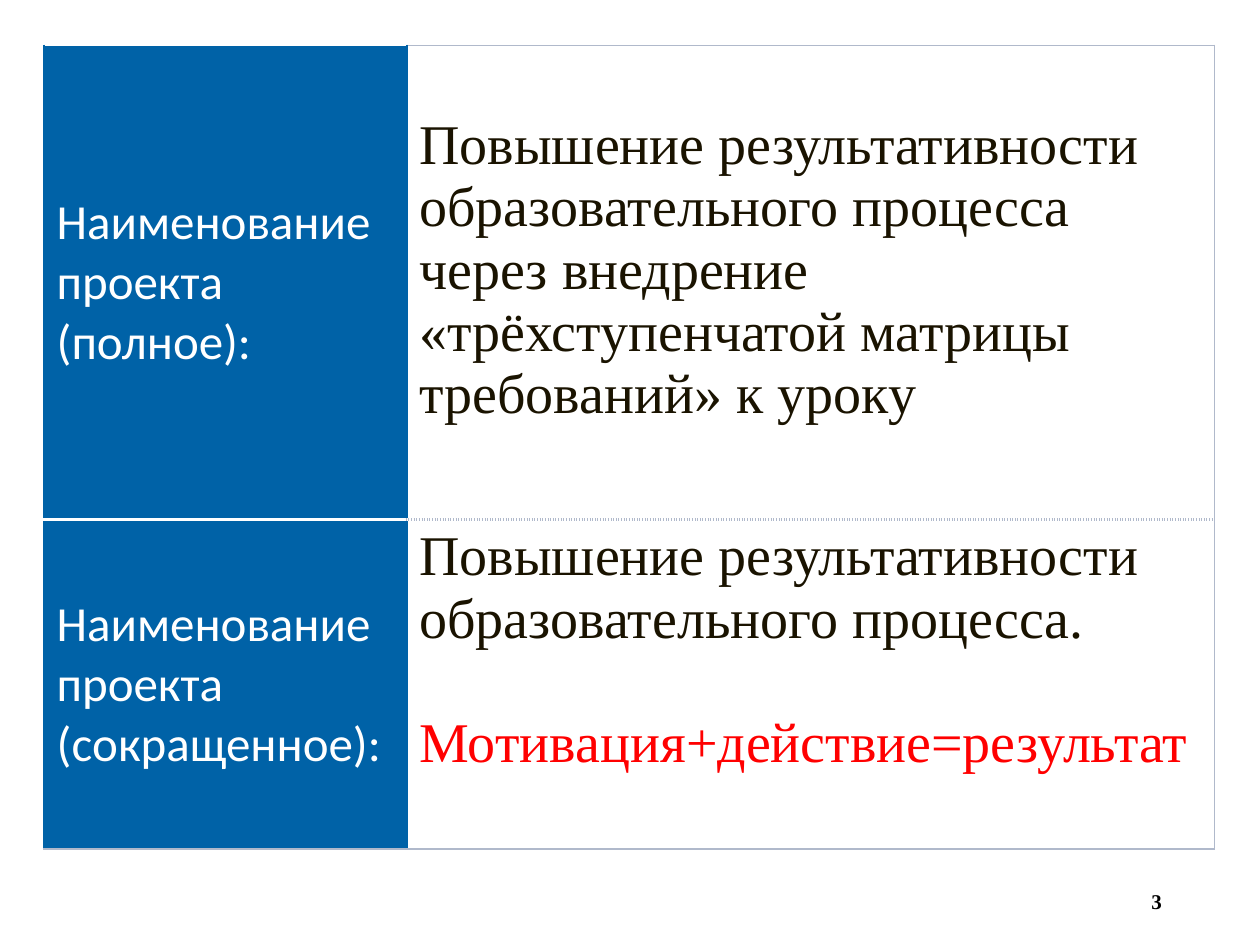
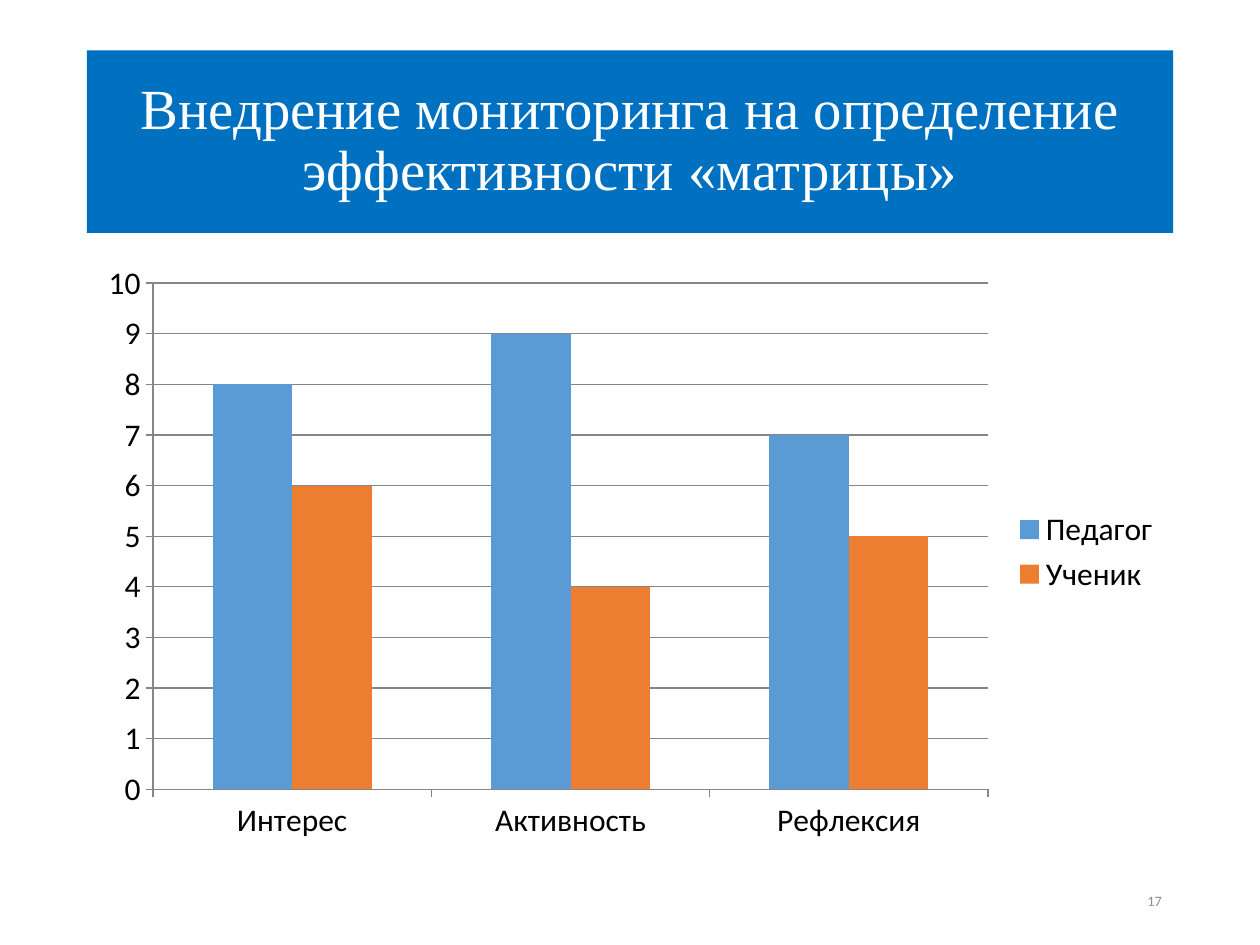
from dataclasses import dataclass
from typing import NamedTuple, Optional

from lxml.etree import SubElement
from pptx import Presentation
from pptx.chart.data import CategoryChartData
from pptx.dml.color import RGBColor
from pptx.enum.chart import XL_CHART_TYPE as ChartType, XL_LEGEND_POSITION as LegendPos, XL_TICK_MARK as Tick
from pptx.enum.shapes import MSO_SHAPE as Shape
from pptx.enum.text import MSO_ANCHOR as Anchor, PP_ALIGN as Align
from pptx.oxml.ns import qn
from pptx.util import Inches, Pt

SLIDE_W, SLIDE_H = Inches(10), Inches(7.5)


class TextStyle(NamedTuple):
    font: str
    size: float
    color: str
    bold: bool = False


@dataclass(frozen=True)
class Theme:
    white: str = "FFFFFF"
    label_fill: str = "0062A7"
    band_fill: str = "0070C0"
    rule: str = "B0B9CB"
    axis: str = "868686"
    series: tuple[str, ...] = ("5B9BD5", "ED7D31")
    title: TextStyle = TextStyle("Times New Roman", 32.4, "FFFFFF")
    label: TextStyle = TextStyle("Calibri", 28, "FFFFFF")
    body: TextStyle = TextStyle("Times New Roman", 32, "1A1300")
    accent: TextStyle = TextStyle("Times New Roman", 32, "FF0000")
    chart: TextStyle = TextStyle("Calibri", 18, "000000")
    number_strong: TextStyle = TextStyle("Times New Roman", 12, "000000", True)
    number_soft: TextStyle = TextStyle("Calibri", 8.2, "8C8C8C")


THEME = Theme()


class Frame(NamedTuple):
    left: float
    top: float
    width: float
    height: float

    def place(self) -> tuple[int, int, int, int]:
        return (int(SLIDE_W * self.left / 100), int(SLIDE_H * self.top / 100),
                int(SLIDE_W * self.width / 100), int(SLIDE_H * self.height / 100))


TITLE_BAND = Frame(6.9, 5.33, 86.2, 19.33)
CHART_AREA = Frame(6.9, 26.67, 86.2, 63.47)
NUMBER_BOX = Frame(70.7, 92.67, 22.5, 5.33)
TABLE_AREA = Frame(3.5, 4.8, 92.9, 85.07)
COLUMN_SHARES = (0.31, 0.69)
ROW_SHARES = (0.59, 0.41)


class Edge(NamedTuple):
    color: str
    width: float
    dash: str = "solid"


class Borders(NamedTuple):
    L: Edge
    R: Edge
    T: Optional[Edge]
    B: Edge


class Line(NamedTuple):
    text: str
    style: TextStyle
    before: float = 0


@dataclass(frozen=True)
class CellSpec:
    lines: tuple[Line, ...]
    fill: str
    borders: Borders
    anchor: Anchor = Anchor.TOP
    top_inset: float = 0.05


BLUE_EDGE = Edge(THEME.label_fill, 1.5)
WHITE_EDGE = Edge(THEME.white, 1.5)
THIN_EDGE = Edge(THEME.rule, 1)
DOT_EDGE = Edge(THEME.rule, 1.5, "sysDot")


def label_cell(text: str, top: Optional[Edge], bottom: Edge) -> CellSpec:
    return CellSpec((Line(text, THEME.label),), THEME.label_fill,
                    Borders(BLUE_EDGE, BLUE_EDGE, top, bottom), Anchor.MIDDLE)


def body_cell(lines: tuple[Line, ...], top: Edge, bottom: Edge, top_inset: float = 0.05) -> CellSpec:
    return CellSpec(lines, THEME.white, Borders(BLUE_EDGE, THIN_EDGE, top, bottom),
                    top_inset=top_inset)


PROJECT_NAMES = (
    (label_cell("Наименование проекта (полное):", None, WHITE_EDGE),
     body_cell((Line("Повышение результативности образовательного процесса через внедрение "
                     "«трёхступенчатой матрицы требований» к уроку", THEME.body),),
               THIN_EDGE, DOT_EDGE, top_inset=0.55)),
    (label_cell("Наименование проекта (сокращенное):", WHITE_EDGE, THIN_EDGE),
     body_cell((Line("Повышение результативности образовательного процесса.", THEME.body),
                Line("Мотивация+действие=результат", THEME.accent, before=35.4)),
               DOT_EDGE, THIN_EDGE)),
)
CRITERIA = ("Интерес", "Активность", "Рефлексия")
SCORES = {"Педагог": (8, 9, 7), "Ученик": (6, 4, 5)}


def style_font(font, style: TextStyle) -> None:
    font.name = style.font
    font.size = Pt(style.size)
    font.bold = style.bold
    font.color.rgb = RGBColor.from_string(style.color)


def fill_solid(fill, color: str) -> None:
    fill.solid()
    fill.fore_color.rgb = RGBColor.from_string(color)


def write(p, text: str, style: TextStyle, align: Align = Align.LEFT) -> None:
    p.text = text
    p.alignment = align
    for r in p.runs:
        style_font(r.font, style)


def draw_borders(cell, borders: Borders) -> None:
    tcPr = cell._tc.get_or_add_tcPr()
    for side, edge in borders._asdict().items():
        if edge is None:
            continue
        ln = SubElement(tcPr, qn(f"a:ln{side}"), w=str(Pt(edge.width)))
        color = SubElement(SubElement(ln, qn("a:solidFill")), qn("a:srgbClr"))
        color.set("val", edge.color)
        SubElement(ln, qn("a:prstDash"), val=edge.dash)


def draw_cell(cell, spec: CellSpec) -> None:
    draw_borders(cell, spec.borders)
    fill_solid(cell.fill, spec.fill)
    cell.vertical_anchor = spec.anchor
    cell.margin_top = Inches(spec.top_inset)
    tf = cell.text_frame
    for i, line in enumerate(spec.lines):
        p = tf.paragraphs[0] if i == 0 else tf.add_paragraph()
        write(p, line.text, line.style)
        p.space_before = Pt(line.before)


def add_names_table(s) -> None:
    left, top, width, height = TABLE_AREA.place()
    table = s.shapes.add_table(len(ROW_SHARES), len(COLUMN_SHARES), left, top, width, height).table
    table.first_row = table.horz_banding = False
    for column, share in zip(table.columns, COLUMN_SHARES):
        column.width = int(width * share)
    for row, share, specs in zip(table.rows, ROW_SHARES, PROJECT_NAMES):
        row.height = int(height * share)
        for cell, spec in zip(row.cells, specs):
            draw_cell(cell, spec)


def add_title_band(s, text: str) -> None:
    sp = s.shapes.add_shape(Shape.RECTANGLE, *TITLE_BAND.place())
    sp.shadow.inherit = False
    fill_solid(sp.fill, THEME.band_fill)
    sp.line.fill.background()
    tf = sp.text_frame
    tf.word_wrap = True
    tf.vertical_anchor = Anchor.MIDDLE
    write(tf.paragraphs[0], text, THEME.title, Align.CENTER)
    tf.paragraphs[0].line_spacing = 0.9


def add_slide_number(s, number: int, style: TextStyle) -> None:
    tf = s.shapes.add_textbox(*NUMBER_BOX.place()).text_frame
    tf.word_wrap = True
    tf.vertical_anchor = Anchor.MIDDLE
    write(tf.paragraphs[0], str(number), style, Align.RIGHT)


def style_line(line) -> None:
    line.color.rgb = RGBColor.from_string(THEME.axis)
    line.width = Pt(0.75)


def add_scores_chart(s) -> None:
    data = CategoryChartData(number_format="General")
    data.categories = CRITERIA
    for name, values in SCORES.items():
        data.add_series(name, values)
    chart = s.shapes.add_chart(ChartType.COLUMN_CLUSTERED, *CHART_AREA.place(), data).chart
    style_font(chart.font, THEME.chart)
    chart.has_title = False
    chart.has_legend = True
    chart.legend.position = LegendPos.RIGHT
    chart.legend.include_in_layout = False
    for axis in (chart.category_axis, chart.value_axis):
        axis.major_tick_mark = Tick.OUTSIDE
        axis.minor_tick_mark = Tick.NONE
        style_line(axis.format.line)
    scale = chart.value_axis
    scale.minimum_scale, scale.maximum_scale, scale.major_unit = 0, 10, 1
    scale.has_major_gridlines = True
    style_line(scale.major_gridlines.format.line)
    plot = chart.plots[0]
    plot.gap_width = 150
    plot.overlap = 0
    plot.vary_by_categories = False
    for series, color in zip(plot.series, THEME.series):
        fill_solid(series.format.fill, color)


def main() -> None:
    prs = Presentation()
    prs.slide_width, prs.slide_height = SLIDE_W, SLIDE_H
    blank = prs.slide_layouts[6]

    s = prs.slides.add_slide(blank)
    add_slide_number(s, 3, THEME.number_strong)
    add_names_table(s)

    s = prs.slides.add_slide(blank)
    add_title_band(s, "Внедрение мониторинга на определение эффективности «матрицы»")
    add_scores_chart(s)
    add_slide_number(s, 17, THEME.number_soft)

    prs.save("out.pptx")


if __name__ == "__main__":
    main()
